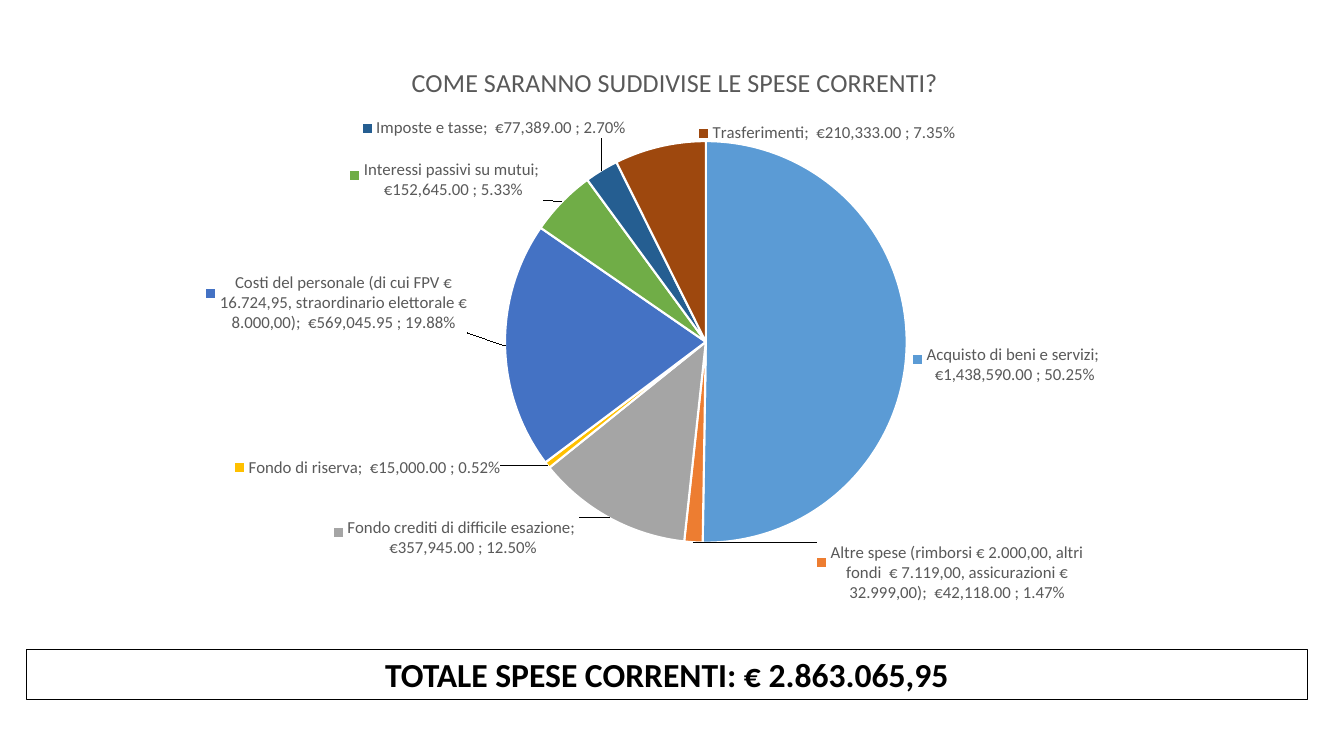
import copy
from dataclasses import dataclass

import lxml.etree
import pptx
import pptx.chart.data
import pptx.dml.color
import pptx.enum.chart
import pptx.enum.text
import pptx.oxml.ns
import pptx.util


@dataclass(frozen=True)
class Theme:
    font: str = "Calibri"
    black: str = "000000"
    white: str = "FFFFFF"
    grey: str = "595959"
    title_size: float = 18.6
    label_size: float = 12
    total_size: float = 24
    outline: float = 0.75
    slice_edge: float = 1.5


@dataclass(frozen=True)
class Area:
    """Left, top, width and height as percentages of the enclosing area."""
    left: float
    top: float
    width: float = 0
    height: float = 0


@dataclass(frozen=True)
class Expense:
    """One slice; shift_x and shift_y move its label, in percent of the chart."""
    name: str
    amount: float
    color: str
    shift_x: float
    shift_y: float


THEME = Theme()
SLIDE_WIDTH = pptx.util.Inches(13.33)
SLIDE_HEIGHT = pptx.util.Inches(7.5)
CHART_AREA = Area(2.63, 4.4, 94.67, 78)
TOTAL_AREA = Area(1.95, 85.87, 95.35, 6.67)
PIE_AREA = Area(36.9, 18.3, 31.6, 68.1)
TITLE_AREA = Area(29.2, 4.4)
TITLE = "COME SARANNO SUDDIVISE LE SPESE CORRENTI?"
TOTAL = "TOTALE SPESE CORRENTI: € 2.863.065,95"
EXPENSES = [
    Expense("Acquisto di beni e servizi", 1438590, "5B9BD5", 0, 3.6),
    Expense("Altre spese (rimborsi € 2.000,00, altri fondi  € 7.119,00, "
            "assicurazioni € 32.999,00)", 42118, "ED7D31", 20.2, -0.95),
    Expense("Fondo crediti di difficile esazione", 357945, "A5A5A5", -2.17, -0.95),
    Expense("Fondo di riserva", 15000, "FFC000", -3.3, -1.87),
    Expense("Costi del personale (di cui FPV € 16.724,95, "
            "straordinario elettorale € 8.000,00)", 569045.95, "4472C4", -2.5, -7.3),
    Expense("Interessi passivi su mutui", 152645, "70AD47", -1.15, 0.4),
    Expense("Imposte e tasse", 77389, "255E91", 2.16, -4.6),
    Expense("Trasferimenti", 210333, "9E480E", 23.35, 0.4),
]


def rgb(color: str) -> pptx.dml.color.RGBColor:
    return pptx.dml.color.RGBColor.from_string(color)


def on_slide(area: Area) -> tuple[int, int, int, int]:
    return (round(SLIDE_WIDTH * area.left / 100), round(SLIDE_HEIGHT * area.top / 100),
            round(SLIDE_WIDTH * area.width / 100), round(SLIDE_HEIGHT * area.height / 100))


def set_font(font, size: float, color: str, bold: bool = False) -> None:
    font.name = THEME.font
    font.size = pptx.util.Pt(size)
    font.bold = bold
    font.color.rgb = rgb(color)


def add_node(parent, tag: str, **attributes: str):
    node = lxml.etree.SubElement(parent, pptx.oxml.ns.qn(tag))
    for key, value in attributes.items():
        node.set(key, value)
    return node


def set_layout(parent, index: int, area: Area, absolute: bool = True) -> None:
    """Place a chart part by hand; a relative layout shifts its usual place."""
    for old in parent.findall(pptx.oxml.ns.qn("c:layout")):
        parent.remove(old)
    layout = add_node(parent, "c:layout")
    manual = add_node(layout, "c:manualLayout")
    if absolute and area.width:
        add_node(manual, "c:layoutTarget", val="inner")
    if absolute:
        add_node(manual, "c:xMode", val="edge")
        add_node(manual, "c:yMode", val="edge")
    sides = {"c:x": area.left, "c:y": area.top, "c:w": area.width, "c:h": area.height}
    for tag, share in sides.items():
        if share or tag in ("c:x", "c:y"):
            add_node(manual, tag, val=f"{share / 100:.4f}")
    parent.insert(index, layout)


def style_labels(series) -> None:
    labels = series.data_labels
    set_font(labels.font, THEME.label_size, THEME.grey)
    labels.number_format = "0.00%"
    labels.number_format_is_linked = False
    labels.position = pptx.enum.chart.XL_LABEL_POSITION.OUTSIDE_END
    labels.show_legend_key = True
    labels.show_category_name = True
    labels.show_value = True
    labels.show_percentage = True

    group = series._element.find(pptx.oxml.ns.qn("c:dLbls"))
    separator = add_node(group, "c:separator")
    separator.text = "; "
    group.find(pptx.oxml.ns.qn("c:showBubbleSize")).addnext(separator)
    leader_tag = pptx.oxml.ns.qn("c:showLeaderLines")
    shared = [node for node in group if node.tag != leader_tag]
    for index, expense in enumerate(EXPENSES):
        label = add_node(group, "c:dLbl")
        add_node(label, "c:idx", idx="").attrib.clear()
        label[0].set("val", str(index))
        label.extend(copy.deepcopy(node) for node in shared)
        set_layout(label, 1, Area(expense.shift_x, expense.shift_y), absolute=False)
        group.insert(index, label)


def add_expense_chart(page) -> None:
    data = pptx.chart.data.CategoryChartData(number_format='" €"#,##0.00" "')
    data.categories = [expense.name for expense in EXPENSES]
    data.add_series(TITLE, [expense.amount for expense in EXPENSES])
    chart = page.shapes.add_chart(
        pptx.enum.chart.XL_CHART_TYPE.PIE, *on_slide(CHART_AREA), data).chart
    set_font(chart.font, 10, THEME.black)
    chart.has_legend = False
    chart.has_title = True
    span = chart.chart_title.text_frame.paragraphs[0].add_run()
    span.text = TITLE
    set_font(span.font, THEME.title_size, THEME.grey)
    set_layout(chart.chart_title._element, 1, TITLE_AREA)
    plot_area = chart._chartSpace.chart.plotArea
    set_layout(plot_area, 0, PIE_AREA)

    pie = chart.plots[0]
    pie.vary_by_categories = True
    series = pie.series[0]
    for index, expense in enumerate(EXPENSES):
        wedge = series.points[index].format
        wedge.fill.solid()
        wedge.fill.fore_color.rgb = rgb(expense.color)
        wedge.line.color.rgb = rgb(THEME.white)
        wedge.line.width = pptx.util.Pt(THEME.slice_edge)
    style_labels(series)


def add_total(page) -> None:
    box = page.shapes.add_textbox(*on_slide(TOTAL_AREA))
    box.line.color.rgb = rgb(THEME.black)
    box.line.width = pptx.util.Pt(THEME.outline)
    box.text_frame.word_wrap = True
    para = box.text_frame.paragraphs[0]
    para.alignment = pptx.enum.text.PP_ALIGN.CENTER
    span = para.add_run()
    span.text = TOTAL
    set_font(span.font, THEME.total_size, THEME.black, bold=True)


def main() -> None:
    deck = pptx.Presentation()
    deck.slide_width = SLIDE_WIDTH
    deck.slide_height = SLIDE_HEIGHT
    page = deck.slides.add_slide(deck.slide_layouts.get_by_name("Blank"))
    add_total(page)
    add_expense_chart(page)
    deck.save("out.pptx")


if __name__ == "__main__":
    main()
